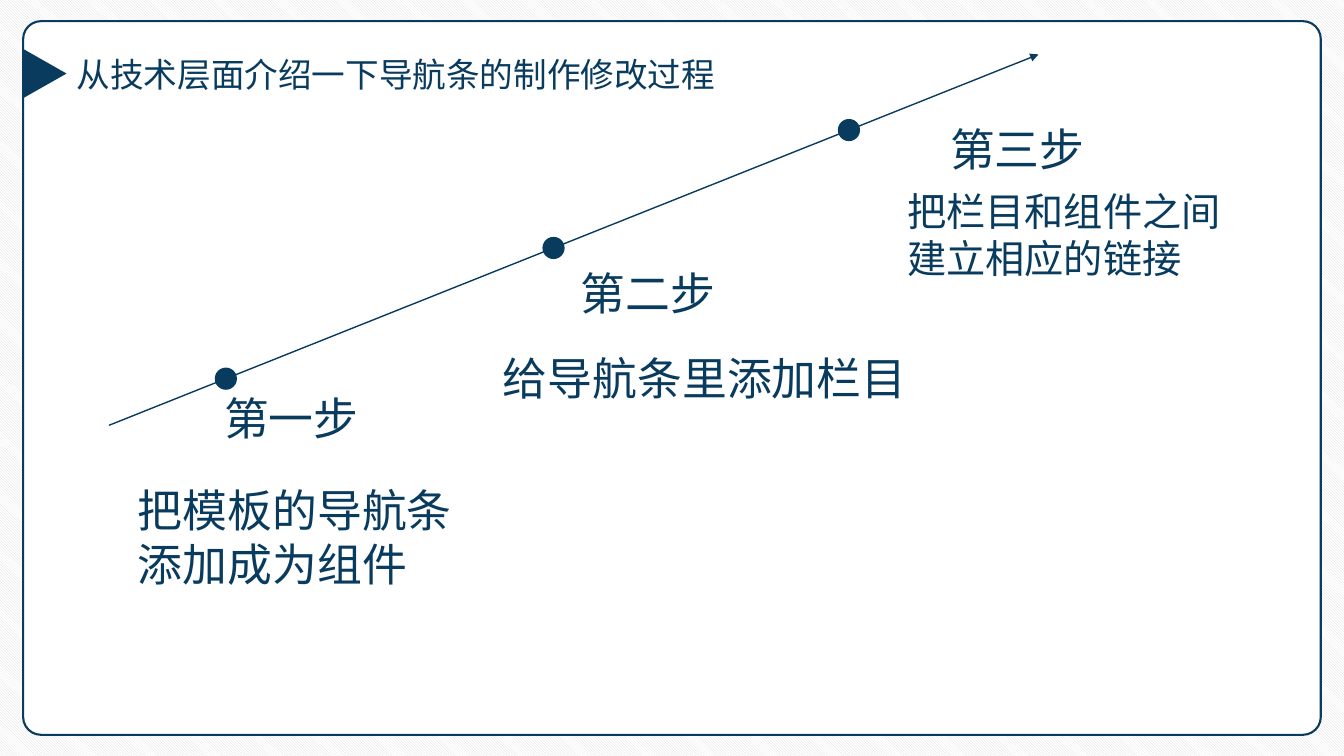
from lxml import etree
from pptx import Presentation
from pptx.dml.color import RGBColor
from pptx.enum.dml import MSO_PATTERN
from pptx.enum.shapes import MSO_CONNECTOR, MSO_SHAPE
from pptx.enum.text import MSO_ANCHOR, MSO_AUTO_SIZE, PP_ALIGN
from pptx.oxml.ns import qn
from pptx.util import Inches, Pt

ROUNDED, TRIANGLE, OVAL = MSO_SHAPE.ROUNDED_RECTANGLE, MSO_SHAPE.ISOSCELES_TRIANGLE, MSO_SHAPE.OVAL
STRAIGHT = MSO_CONNECTOR.STRAIGHT
LEFT, CENTER = PP_ALIGN.LEFT, PP_ALIGN.CENTER
TOP, MIDDLE = MSO_ANCHOR.TOP, MSO_ANCHOR.MIDDLE
NO_AUTOFIT = MSO_AUTO_SIZE.NONE
DIAGONAL = MSO_PATTERN.LIGHT_DOWNWARD_DIAGONAL

COLORS = {"navy": "083B5E", "white": "FFFFFF", "stripe": "D9D9D9"}
BODY_FONT = "Noto Sans CJK SC"
STEP_FONT = "Noto Sans CJK JP"
DOT_SIZE = 0.22

TITLE = "从技术层面介绍一下导航条的制作修改过程"
STEPS = [
    {"dot": 2.24, "name": "第一步", "name_box": (1.87, 3.83, 2.04, 0.64),
     "detail": "把模板的导航条 添加成为组件", "detail_box": (1.27, 4.74, 3.61, 1.18), "size": 32},
    {"dot": 5.49, "name": "第二步", "name_box": (5.29, 2.59, 2.27, 0.64),
     "detail": "给导航条里添加栏目", "detail_box": (4.89, 3.43, 4.33, 0.64), "size": 32},
    {"dot": 8.42, "name": "第三步", "name_box": (9.07, 1.16, 2.04, 0.64),
     "detail": "把栏目和组件之间建立相应的链接", "detail_box": (8.9, 1.81, 3.65, 1.04), "size": 28},
]


def color(name):
    return RGBColor.from_string(COLORS[name])


def lengths(box):
    return [Inches(value) for value in box]


def write(shape, text, size, font_name, align=LEFT, anchor=TOP):
    frame = shape.text_frame
    frame.word_wrap = True
    frame.auto_size = NO_AUTOFIT
    frame.vertical_anchor = anchor
    frame.text = text
    paragraph = frame.paragraphs[0]
    paragraph.alignment = align
    paragraph.font.size = Pt(size)
    paragraph.font.color.rgb = color("navy")
    paragraph.font.name = font_name
    defaults = paragraph._p.pPr.find(qn("a:defRPr"))
    etree.SubElement(defaults, qn("a:ea")).set("typeface", font_name)


def add_text(page, box, text, size, font_name, align=LEFT):
    write(page.shapes.add_textbox(*lengths(box)), text, size, font_name, align)


def add_filled(page, kind, box, fill):
    shape = page.shapes.add_shape(kind, *lengths(box))
    shape.shadow.inherit = False
    shape.fill.solid()
    shape.fill.fore_color.rgb = color(fill)
    shape.line.fill.background()
    return shape


def add_panel(page, box):
    background = page.background.fill
    background.patterned()
    background.pattern = DIAGONAL
    background.fore_color.rgb = color("stripe")
    background.back_color.rgb = color("white")
    panel = add_filled(page, ROUNDED, box, "white")
    panel.adjustments[0] = 0.025
    panel.line.color.rgb = color("navy")
    panel.line.width = Pt(1.5)


def add_heading(page, box):
    left, top, width, height = box
    title = page.shapes.title
    title.left, title.top, title.width, title.height = lengths((left + 0.47, top, width - 0.47, height))
    write(title, TITLE, 24, BODY_FONT, anchor=MIDDLE)
    page.shapes._spTree.append(title._element)
    marker = add_filled(page, TRIANGLE, (left, top + 0.03, 0.5, 0.44), "navy")
    marker.rotation = 90


def add_arrow(page, box):
    left, top, width, height = box
    arrow = page.shapes.add_connector(STRAIGHT, *lengths((left, top + height, left + width, top)))
    arrow.line.color.rgb = color("navy")
    arrow.line.width = Pt(1)
    etree.SubElement(arrow.line._get_or_add_ln(), qn("a:tailEnd")).set("type", "triangle")
    etree.SubElement(arrow._element.spPr, qn("a:effectLst"))


def add_steps(page, box):
    left, top, width, height = box
    add_arrow(page, box)
    for step in STEPS:
        center = top + height * (1 - (step["dot"] - left) / width)
        dot_box = (step["dot"] - DOT_SIZE / 2, center - DOT_SIZE / 2, DOT_SIZE, DOT_SIZE)
        add_filled(page, OVAL, dot_box, "navy")
        add_text(page, step["name_box"], step["name"], 32, STEP_FONT, CENTER)
        add_text(page, step["detail_box"], step["detail"], step["size"], BODY_FONT)


def main():
    deck = Presentation()
    deck.slide_width, deck.slide_height = Inches(13.33), Inches(7.5)
    page = deck.slides.add_slide(deck.slide_layouts[5])
    add_panel(page, (0.23, 0.21, 12.87, 7.08))
    add_heading(page, (0.19, 0.48, 7.28, 0.5))
    add_steps(page, (1.08, 0.54, 9.22, 3.68))
    deck.save("out.pptx")


if __name__ == "__main__":
    main()
